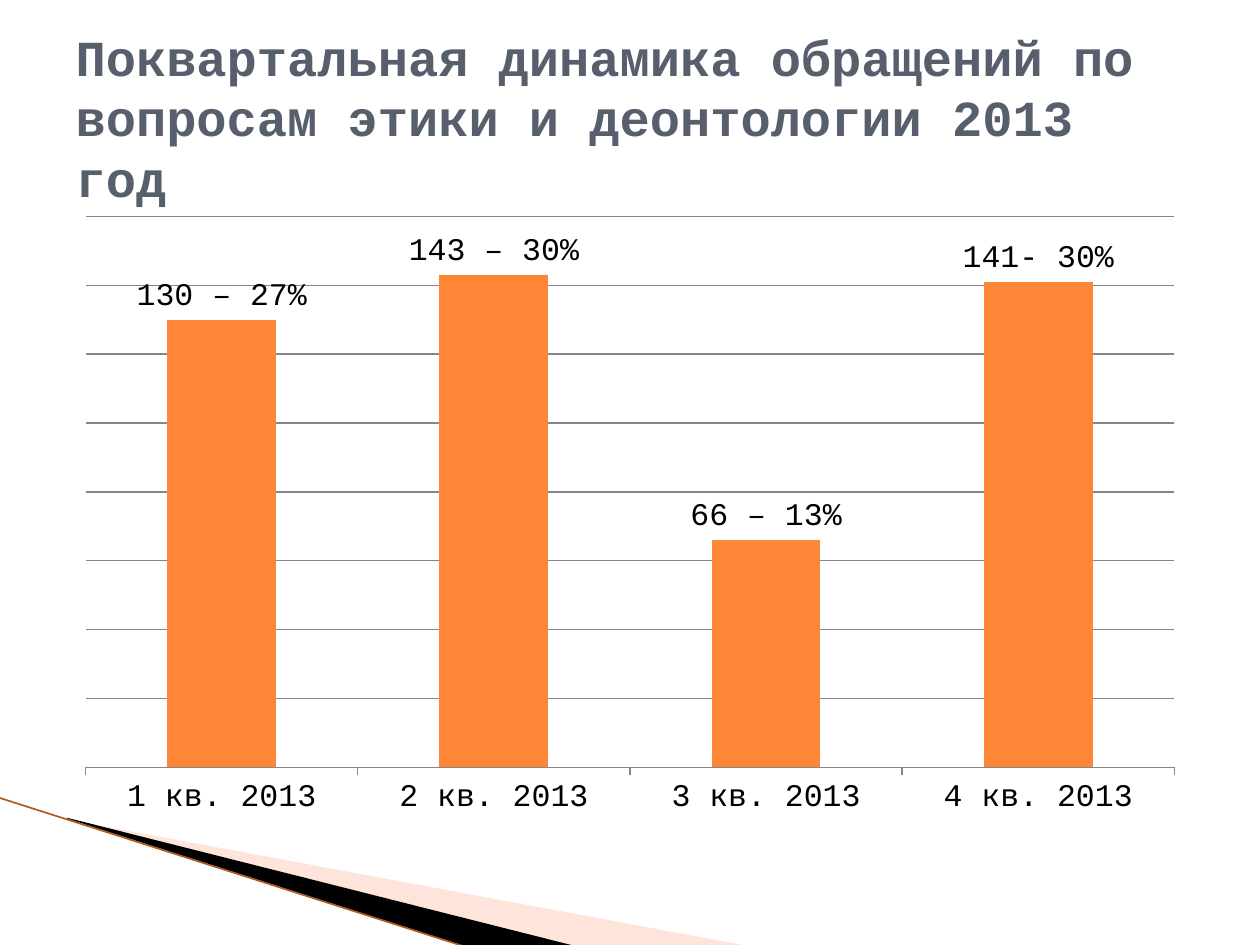
import pptx
import pptx.chart.data
import pptx.dml.color
import pptx.enum.chart
import pptx.enum.shapes
import pptx.enum.text
import pptx.oxml.ns
import pptx.oxml.xmlchemy
import pptx.util
from dataclasses import dataclass

Pt = pptx.util.Pt


@dataclass(frozen=True)
class Theme:
    face: str = "Courier New"
    title: str = "575F6D"
    text: str = "000000"
    bar: str = "FE8637"
    grid: str = "868686"
    peach: str = "FFBCA5"
    dark: str = "000000"
    edge: str = "B05A1E"
    head_size: float = 28.8
    body_size: float = 18


def paint(color, value):
    color.rgb = pptx.dml.color.RGBColor.from_string(value)


class Maker:
    def __init__(self, slide, theme):
        self.slide = slide
        self.theme = theme

    def style(self, font, size, color, bold=False):
        font.name = self.theme.face
        font.size = Pt(size)
        font.bold = bold
        paint(font.color, color)

    def title(self, text, left, top, width, height):
        shape = self.slide.shapes.title
        shape.left, shape.top = Pt(left), Pt(top)
        shape.width, shape.height = Pt(width), Pt(height)
        frame = shape.text_frame
        frame.word_wrap = True
        frame.auto_size = pptx.enum.text.MSO_AUTO_SIZE.NONE
        frame.vertical_anchor = pptx.enum.text.MSO_ANCHOR.MIDDLE
        para = frame.paragraphs[0]
        para.alignment = pptx.enum.text.PP_ALIGN.LEFT
        run = para.add_run()
        run.text = text
        self.style(run.font, self.theme.head_size, self.theme.title, True)

    def wedge(self, points, color, alpha=100):
        """Draw a filled outline; alpha is its opacity in percent."""
        spots = [(Pt(x), Pt(y)) for x, y in points]
        build = self.slide.shapes.build_freeform(*spots[0])
        build.add_line_segments(spots[1:], close=True)
        shape = build.convert_to_shape()
        shape.shadow.inherit = False
        shape.fill.solid()
        paint(shape.fill.fore_color, color)
        shape.line.fill.background()
        if alpha < 100:
            tint = shape._element.spPr.find(
                ".//" + pptx.oxml.ns.qn("a:srgbClr"))
            node = pptx.oxml.xmlchemy.OxmlElement("a:alpha")
            node.set("val", str(alpha * 1000))
            tint.append(node)

    def line(self, start, end, color, width):
        link = self.slide.shapes.add_connector(
            pptx.enum.shapes.MSO_CONNECTOR.STRAIGHT,
            *(Pt(n) for n in (*start, *end)))
        paint(link.line.color, color)
        link.line.width = Pt(width)
        link._element.spPr.append(
            pptx.oxml.xmlchemy.OxmlElement("a:effectLst"))

    def chart(self, rows, left, top, width, height):
        """Draw columns from rows of category, value and label."""
        names, values, labels = zip(*rows)
        data = pptx.chart.data.CategoryChartData()
        data.categories = names
        data.add_series("Series 1", values)
        kinds = pptx.enum.chart
        chart = self.slide.shapes.add_chart(
            kinds.XL_CHART_TYPE.COLUMN_CLUSTERED,
            Pt(left), Pt(top), Pt(width), Pt(height), data).chart
        chart.has_legend = False
        chart.has_title = False
        self.style(chart.font, self.theme.body_size, self.theme.text)

        scale = chart.value_axis
        scale.minimum_scale, scale.maximum_scale = 0, 160
        scale.major_unit = 20
        scale.has_major_gridlines = True
        scale.visible = False
        base = chart.category_axis
        base.major_tick_mark = kinds.XL_TICK_MARK.OUTSIDE
        for rule in (scale.major_gridlines.format.line, base.format.line):
            paint(rule.color, self.theme.grid)
            rule.width = Pt(0.75)

        plot = chart.plots[0]
        plot.gap_width = 150
        plot.vary_by_categories = False
        bars = plot.series[0]
        bars.format.fill.solid()
        paint(bars.format.fill.fore_color, self.theme.bar)
        bars.data_labels.show_value = True
        for i, text in enumerate(labels):
            label = bars.points[i].data_label
            run = label.text_frame.paragraphs[0].add_run()
            run.text = text
            self.style(run.font, self.theme.body_size, self.theme.text)
            label.position = kinds.XL_LABEL_POSITION.OUTSIDE_END


def main():
    deck = pptx.Presentation()
    deck.slide_width, deck.slide_height = Pt(720), Pt(540)
    theme = Theme()
    maker = Maker(deck.slides.add_slide(deck.slide_layouts[5]), theme)

    maker.wedge([(39.6, 468.5), (428.4, 540.7), (328.3, 540.7)],
                theme.peach, 40)
    maker.wedge([(38.2, 467.3), (329, 540.7), (267.8, 541.4), (38.9, 468)],
                theme.dark)
    maker.line((-0.7, 455.8), (267.1, 541.4), theme.edge, 0.95)
    maker.chart([
        ("1 кв. 2013", 130, "130 – 27%"),
        ("2 кв. 2013", 143, "143 – 30%"),
        ("3 кв. 2013", 66, "66 – 13%"),
        ("4 кв. 2013", 141, "141- 30%"),
    ], 36, 116.6, 648, 356.4)
    maker.title("Поквартальная динамика обращений по вопросам этики "
                "и деонтологии 2013 год", 36, 21.6, 648, 90)
    deck.save("out.pptx")


if __name__ == "__main__":
    main()
